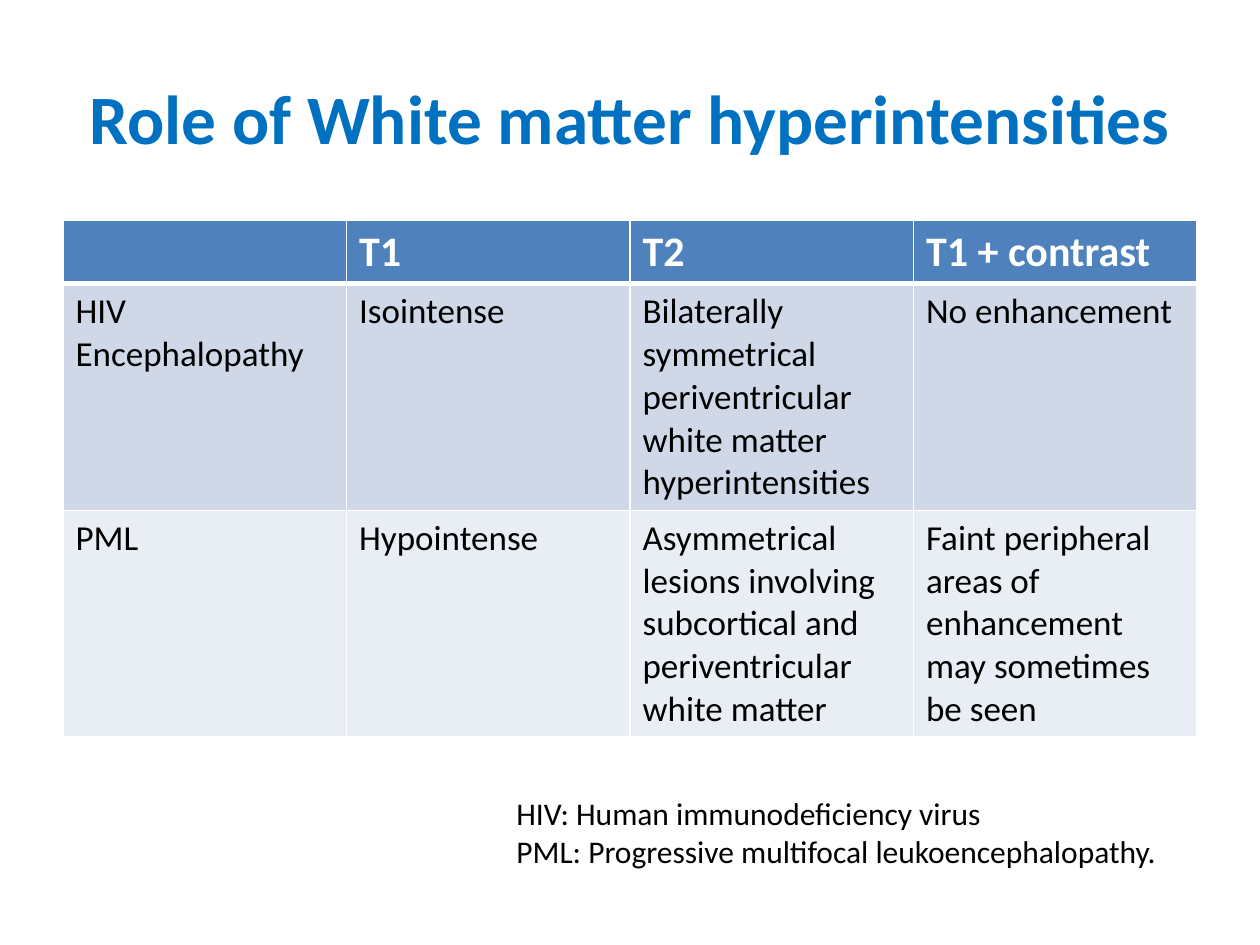
from lxml import etree
from pptx import Presentation
from pptx.dml.color import RGBColor
from pptx.enum.text import MSO_ANCHOR, PP_ALIGN
from pptx.oxml.ns import qn
from pptx.util import Cm, Pt

CENTER, LEFT = PP_ALIGN.CENTER, PP_ALIGN.LEFT
MIDDLE, TOP = MSO_ANCHOR.MIDDLE, MSO_ANCHOR.TOP

FONT = "Calibri"
COLORS = {
    "title": "0070C0",
    "header": "4F81BD",
    "odd_row": "D0D8E8",
    "even_row": "E9EDF4",
    "white": "FFFFFF",
    "black": "000000",
}
FINDINGS = [
    ["", "T1", "T2", "T1 + contrast"],
    ["HIV Encephalopathy", "Isointense",
     "Bilaterally symmetrical periventricular white matter hyperintensities",
     "No enhancement"],
    ["PML", "Hypointense",
     "Asymmetrical lesions involving subcortical and periventricular white matter",
     "Faint peripheral areas of enhancement may sometimes be seen"],
]
ROW_HEIGHTS = [1.27, 4.57, 4.57]
ABBREVIATIONS = [
    "HIV: Human immunodeficiency virus",
    "PML: Progressive multifocal leukoencephalopathy.",
]


def write_text(text_frame, lines, size, color="black", bold=False,
               align=LEFT, anchor=TOP):
    text_frame.word_wrap = True
    text_frame.vertical_anchor = anchor
    for index, line in enumerate(lines):
        paragraph = text_frame.add_paragraph() if index else text_frame.paragraphs[0]
        paragraph.text = line
        paragraph.alignment = align
        paragraph.font.name = FONT
        paragraph.font.size = Pt(size)
        paragraph.font.bold = bold
        paragraph.font.color.rgb = RGBColor.from_string(COLORS[color])


def add_text_box(slide, box, lines, **text_format):
    shape = slide.shapes.add_textbox(*(Cm(length) for length in box))
    write_text(shape.text_frame, lines, **text_format)


def set_borders(cell, top, bottom):
    """Draw white cell borders; top and bottom are widths in points."""
    properties = cell._tc.get_or_add_tcPr()
    widths = {"a:lnL": 1, "a:lnR": 1, "a:lnT": top, "a:lnB": bottom}
    for position, (tag, width) in enumerate(widths.items()):
        line = etree.Element(qn(tag), w=str(Pt(width)))
        fill = etree.SubElement(line, qn("a:solidFill"))
        etree.SubElement(fill, qn("a:srgbClr"), val=COLORS["white"])
        properties.insert(position, line)


def add_findings_table(slide, box):
    left, top, width, height = (Cm(length) for length in box)
    column_count = len(FINDINGS[0])
    table = slide.shapes.add_table(
        len(FINDINGS), column_count, left, top, width, height).table
    for column in table.columns:
        column.width = width // column_count

    row_fills = ["header", "odd_row", "even_row"]
    for row_index, texts in enumerate(FINDINGS):
        table.rows[row_index].height = Cm(ROW_HEIGHTS[row_index])
        is_header = row_index == 0
        for column_index, text in enumerate(texts):
            cell = table.cell(row_index, column_index)
            cell.fill.solid()
            cell.fill.fore_color.rgb = RGBColor.from_string(COLORS[row_fills[row_index]])
            set_borders(cell, top=3 if row_index == 1 else 1,
                        bottom=3 if is_header else 1)
            write_text(cell.text_frame, [text], size=24 if is_header else 20,
                       color="white" if is_header else "black", bold=is_header)


def main():
    presentation = Presentation()
    presentation.slide_width, presentation.slide_height = Cm(25.4), Cm(19.05)
    slide = presentation.slides.add_slide(presentation.slide_layouts[6])

    add_text_box(slide, (1.27, 0.76, 22.86, 3.18),
                 ["Role of White matter hyperintensities"], size=39.6,
                 color="title", bold=True, align=CENTER, anchor=MIDDLE)
    add_findings_table(slide, (1.27, 4.45, 22.86, sum(ROW_HEIGHTS)))
    add_text_box(slide, (10.16, 15.88, 13.54, 1.8), ABBREVIATIONS, size=18)

    presentation.save("out.pptx")


if __name__ == "__main__":
    main()
